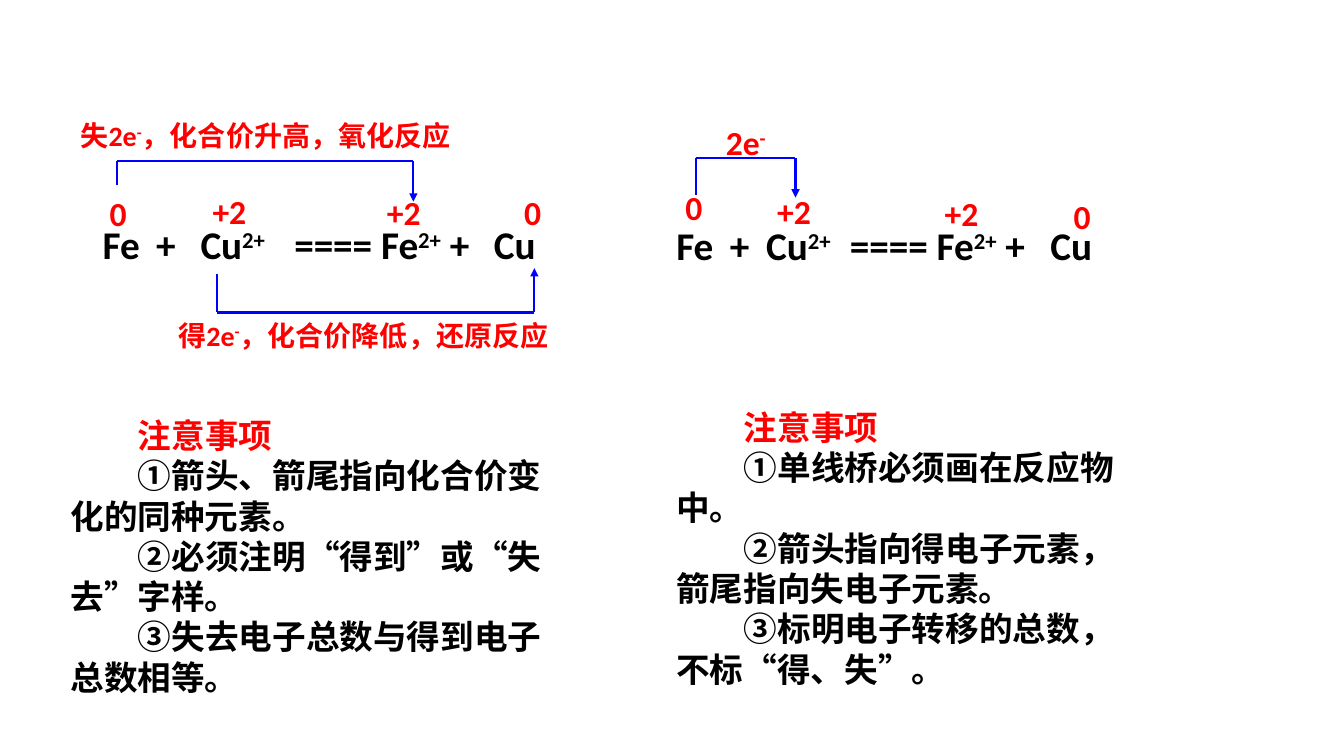
from dataclasses import dataclass
from itertools import groupby, pairwise

from lxml import etree
from pptx import Presentation
from pptx.dml.color import RGBColor
from pptx.enum.shapes import MSO_CONNECTOR
from pptx.enum.text import MSO_ANCHOR, MSO_AUTO_SIZE
from pptx.oxml.ns import qn
from pptx.util import Inches, Pt

STRAIGHT = MSO_CONNECTOR.STRAIGHT
TOP, MIDDLE = MSO_ANCHOR.TOP, MSO_ANCHOR.MIDDLE
GROW = MSO_AUTO_SIZE.SHAPE_TO_FIT_TEXT


@dataclass(frozen=True)
class Theme:
    """Colours, fonts and type sizes of the slide."""
    ink: RGBColor = RGBColor(0, 0, 0)
    red: RGBColor = RGBColor(255, 0, 0)
    blue: RGBColor = RGBColor(0, 0, 255)
    latin: str = "Calibri"
    body: str = "Times New Roman"
    digit: str = "Arial"
    asian: str = "Noto Sans CJK SC"
    large: int = 28
    medium: int = 24
    small: int = 20
    line: float = 1.5


THEME = Theme()

LEFT = {
    "formula": "Fe\t+\tCu^2+^\t==== Fe^2+^ +\tCu",
    "stops": (0.53, 0.97, 1.9, 3.88),
    "charges": [("+2", 1.09, -0.3, 0.63), ("0", 0.07, -0.28, 0.63),
                ("+2", 2.82, -0.29, 0.57), ("0", 4.18, -0.29, 0.33)],
    "bridges": [(0.24, 3.18, -0.3, -0.54, -0.14),
                (1.23, 4.38, 0.58, 0.96, 0.52)],
    "labels": [("失2e^-^，化合价升高，氧化反应", -0.22, -1.01, 4.15, THEME.small),
               ("得2e^-^，化合价降低，还原反应", 0.75, 0.97, 4.01, THEME.small)],
}
RIGHT = {
    "formula": "Fe\t+\tCu^2+^\t==== Fe^2+^ +\tCu",
    "stops": (0.53, 0.89, 1.72, 3.71),
    "charges": [("+2", 1, -0.31, 0.63), ("0", 0.09, -0.35, 0.63),
                ("+2", 2.66, -0.29, 1.26), ("0", 3.94, -0.26, 1.05)],
    "bridges": [(0.29, 1.28, -0.22, -0.58, -0.19)],
    "labels": [("2e^-^", 0.49, -0.99, 0.65, THEME.medium)],
}
LEFT_NOTES = ["注意事项",
              "①箭头、箭尾指向化合价变化的同种元素。",
              "②必须注明“得到”或“失去”字样。",
              "③失去电子总数与得到电子总数相等。"]
RIGHT_NOTES = ["注意事项",
               "①单线桥必须画在反应物中。",
               "②箭头指向得电子元素，箭尾指向失电子元素。",
               "③标明电子转移的总数，不标“得、失”。"]


def add_frame(slide, box, anchor=TOP):
    """Add a wrapping text box and return its text frame."""
    frame = slide.shapes.add_textbox(*map(Inches, box)).text_frame
    form = {"word_wrap": True, "auto_size": GROW, "vertical_anchor": anchor}
    for name, value in form.items():
        setattr(frame, name, value)
    return frame


def add_run(para, text, face, size, color):
    """Add one bold run with its Latin and East Asian fonts."""
    run = para.add_run()
    run.text = text
    form = {"name": face, "size": Pt(size), "bold": True}
    for name, value in form.items():
        setattr(run.font, name, value)
    run.font.color.rgb = color
    props = run._r.get_or_add_rPr()
    etree.SubElement(props, qn("a:ea"), typeface=THEME.asian)
    return props


def add_label(slide, box, text, size, color, stops=()):
    """Write one line, raising the parts between carets."""
    para = add_frame(slide, box).paragraphs[0]
    if stops:
        tabs = etree.SubElement(para._p.get_or_add_pPr(), qn("a:tabLst"))
        for stop in stops:
            etree.SubElement(tabs, qn("a:tab"), pos=str(Inches(stop)), algn="l")
    for index, part in enumerate(text.split("^")):
        if part:
            props = add_run(para, part, THEME.latin, size, color)
            if index % 2:
                props.set("baseline", "30000")


def add_bridge(slide, points):
    """Join the points with lines, the last one ending in an arrowhead."""
    for start, end in pairwise(points):
        line = slide.shapes.add_connector(STRAIGHT, *map(Inches, start + end))
        line.line.color.rgb = THEME.blue
        line.line.width = Pt(THEME.line)
        if end == points[-1]:
            etree.SubElement(line.line._get_or_add_ln(), qn("a:tailEnd"),
                             type="triangle")
        etree.SubElement(line._element.spPr, qn("a:effectLst"))


def add_equation(slide, box, data):
    """Place a formula with its charges, bridges and labels."""
    left, top, width, height = box
    add_label(slide, box, data["formula"], THEME.large, THEME.ink, data["stops"])
    for text, x, y, wide in data["charges"]:
        add_label(slide, (left + x, top + y, wide, 0.51), text,
                  THEME.medium, THEME.red)
    for tail, head, start, bend, end in data["bridges"]:
        steps = [(tail, start), (tail, bend), (head, bend), (head, end)]
        add_bridge(slide, [(left + x, top + y) for x, y in steps])
    for text, x, y, wide, size in data["labels"]:
        add_label(slide, (left + x, top + y, wide, 0.44), text, size, THEME.red)


def pick_face(char):
    """Choose the font for one character of the notes."""
    if char in "①②③":
        return THEME.digit
    return THEME.asian if char in "“”" else THEME.body


def add_notes(slide, box, lines):
    """Write a red heading and its numbered points."""
    frame = add_frame(slide, box, MIDDLE)
    for index, line in enumerate(lines):
        para = frame.add_paragraph() if index else frame.paragraphs[0]
        para._p.get_or_add_pPr().set("indent", str(Inches(0.67)))
        color = THEME.ink if index else THEME.red
        for face, chars in groupby(line, pick_face):
            add_run(para, "".join(chars), face, THEME.medium, color)


def main():
    """Build and save the slide."""
    deck = Presentation()
    deck.slide_width, deck.slide_height = Inches(13.33), Inches(7.5)
    slide = deck.slides.add_slide(deck.slide_layouts[6])
    add_equation(slide, (0.92, 2.14, 5.31, 0.57), LEFT)
    add_equation(slide, (6.61, 2.15, 5.31, 0.57), RIGHT)
    add_notes(slide, (0.6, 4.05, 5.09, 2.93), LEFT_NOTES)
    add_notes(slide, (6.61, 3.97, 4.79, 2.93), RIGHT_NOTES)
    deck.save("out.pptx")


if __name__ == "__main__":
    main()
